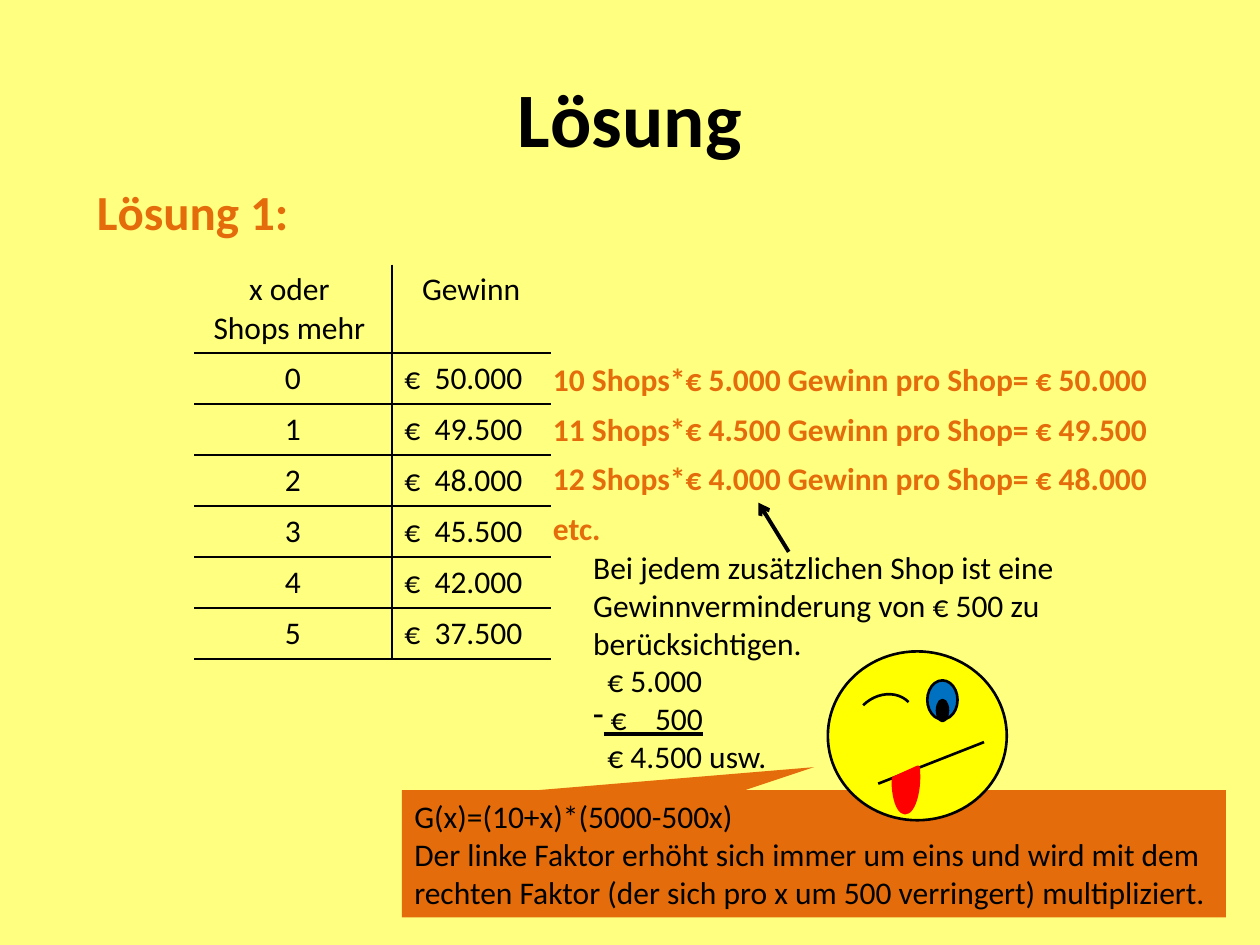
from lxml import etree
from pptx import Presentation
from pptx.dml.color import RGBColor
from pptx.enum import shapes, text
from pptx.oxml.ns import qn
from pptx.util import Inches, Pt

COLORS = {"background": "FFFF80", "black": "000000", "orange": "E46C0A",
          "yellow": "FFFF00", "red": "FF0000", "blue": "0070C0"}
FONT = "Calibri"

TITLE = "Lösung"
SUBTITLE = "Lösung 1:"
PROFITS = [
    ("x oder \vShops mehr ", "Gewinn"),
    ("0", "€  50.000"),
    ("1", "€  49.500"),
    ("2", "€  48.000"),
    ("3", "€  45.500"),
    ("4", "€  42.000"),
    ("5", "€  37.500"),
]
CALCULATIONS = [
    "10 Shops*€ 5.000 Gewinn pro Shop= € 50.000",
    "11 Shops*€ 4.500 Gewinn pro Shop= € 49.500",
    "12 Shops*€ 4.000 Gewinn pro Shop= € 48.000",
    "etc.",
]
EXPLANATION = [
    "Bei jedem zusätzlichen Shop ist eine Gewinnverminderung von € 500 zu berücksichtigen.",
    "  € 5.000",
    " €    500",
    "  € 4.500 usw.",
]
SUBTRAHEND = 2
FORMULA = [
    "G(x)=(10+x)*(5000-500x)",
    "Der linke Faktor erhöht sich immer um eins und wird mit dem rechten Faktor "
    "(der sich pro x um 500 verringert) multipliziert.",
]
SHAPE = shapes.MSO_SHAPE
# preset, left, top, width, height, rotation, fill, line, line width
FACE = [
    (SHAPE.OVAL, 6.57, 5.17, 1.42, 1.34, 0, "yellow", "black", 1.5),
    (SHAPE.CHORD, 6.92, 6.08, 0.54, 0.2, 271.4, "red", "red", 2),
    (SHAPE.ARC, 6.74, 5.53, 0.55, 0.47, 315.5, None, "black", 1.5),
    (SHAPE.OVAL, 7.36, 5.4, 0.24, 0.31, 0, "blue", "black", 1.5),
    (SHAPE.OVAL, 7.44, 5.56, 0.08, 0.16, 0, "black", "black", 2),
]
MOUTH = (6.97, 6.22, 7.81, 5.89)
ARROW = (6.26, 4.38, 6.02, 3.99)


def rgb(name):
    return RGBColor.from_string(COLORS[name])


def write(frame, lines, size=18, color="black", bold=False, align=text.PP_ALIGN.LEFT):
    frame.text = "\n".join(lines)
    for paragraph in frame.paragraphs:
        paragraph.alignment = align
        for run in paragraph.runs:
            font = run.font
            font.name, font.size, font.bold = FONT, Pt(size), bold
            font.color.rgb = rgb(color)


def add_text(slide, box, lines, **style):
    frame = slide.shapes.add_textbox(*map(Inches, box)).text_frame
    frame.word_wrap = True
    write(frame, lines, **style)
    return frame


def add_preset(slide, preset, box, fill, line=None, width=0):
    shape = slide.shapes.add_shape(preset, *map(Inches, box))
    shape.shadow.inherit = False
    if fill:
        shape.fill.solid()
        shape.fill.fore_color.rgb = rgb(fill)
    else:
        shape.fill.background()
    if line:
        shape.line.color.rgb = rgb(line)
        shape.line.width = Pt(width)
    else:
        shape.line.fill.background()
    return shape


def add_line(slide, ends, width):
    line = slide.shapes.add_connector(shapes.MSO_CONNECTOR.STRAIGHT, *map(Inches, ends))
    line.line.color.rgb = rgb("black")
    line.line.width = Pt(width)
    etree.SubElement(line._element.spPr, qn("a:effectLst"))
    return line


def set_borders(cell, drawn):
    """Draw the sides named in drawn (L, R, T, B) and clear the others."""
    properties = cell._tc.get_or_add_tcPr()
    for index, side in enumerate("LRTB"):
        border = etree.Element(qn(f"a:ln{side}"), w=str(Pt(1)))
        if side in drawn:
            fill = etree.SubElement(border, qn("a:solidFill"))
            etree.SubElement(fill, qn("a:srgbClr"), val=COLORS["black"])
        else:
            etree.SubElement(border, qn("a:noFill"))
        properties.insert(index, border)


def add_profit_table(slide):
    box = map(Inches, (1.54, 2.1, 2.83, 3.13))
    table = slide.shapes.add_table(len(PROFITS), 2, *box).table
    table.first_row = table.horz_banding = False
    for column, width in zip(table.columns, (1.57, 1.26)):
        column.width = Inches(width)
    for r, values in enumerate(PROFITS):
        table.rows[r].height = Inches(0.405 if r else 0.7)
        for c, value in enumerate(values):
            cell = table.cell(r, c)
            centred = r == 0 or c == 0
            align = text.PP_ALIGN.CENTER if centred else text.PP_ALIGN.LEFT
            write(cell.text_frame, [value], align=align)
            cell.fill.background()
            set_borders(cell, "RL"[c] + ("TB" if r else "B"))


def main():
    presentation = Presentation()
    presentation.slide_width, presentation.slide_height = Inches(10), Inches(7.5)
    slide = presentation.slides.add_slide(presentation.slide_layouts[6])
    slide.background.fill.solid()
    slide.background.fill.fore_color.rgb = rgb("background")

    title = add_text(slide, (0.5, 0.3, 9, 1.25), [TITLE], size=44, bold=True,
                     align=text.PP_ALIGN.CENTER)
    title.vertical_anchor = text.MSO_ANCHOR.MIDDLE
    add_profit_table(slide)

    for index, calculation in enumerate(CALCULATIONS):
        add_text(slide, (4.29, 2.81 + index * 0.393, 5.04, 0.4), [calculation],
                 color="orange", bold=True)
    arrow = add_line(slide, ARROW, 2.25)
    etree.SubElement(arrow.line._get_or_add_ln(), qn("a:tailEnd"), type="arrow")

    explanation = add_text(slide, (4.61, 4.3, 4.8, 2.22), EXPLANATION)
    subtrahend = explanation.paragraphs[SUBTRAHEND]
    subtrahend.runs[0].font.underline = True
    etree.SubElement(subtrahend._p.get_or_add_pPr(), qn("a:buChar"), char="-")

    callout = add_preset(slide, SHAPE.RECTANGULAR_CALLOUT, (3.19, 6.27, 6.54, 1.01), "orange")
    callout.adjustments[0], callout.adjustments[1] = 0, -0.68
    callout.text_frame.word_wrap = True
    write(callout.text_frame, FORMULA)
    add_text(slide, (0.67, 1.39, 2.91, 0.57), [SUBTITLE], size=28, color="orange", bold=True)

    head, *features = FACE
    add_preset(slide, head[0], head[1:5], *head[6:])
    add_line(slide, MOUTH, 1.5)
    for preset, left, top, width, height, rotation, *paint in features:
        feature = add_preset(slide, preset, (left, top, width, height), *paint)
        feature.rotation = rotation

    presentation.save("out.pptx")


if __name__ == "__main__":
    main()
